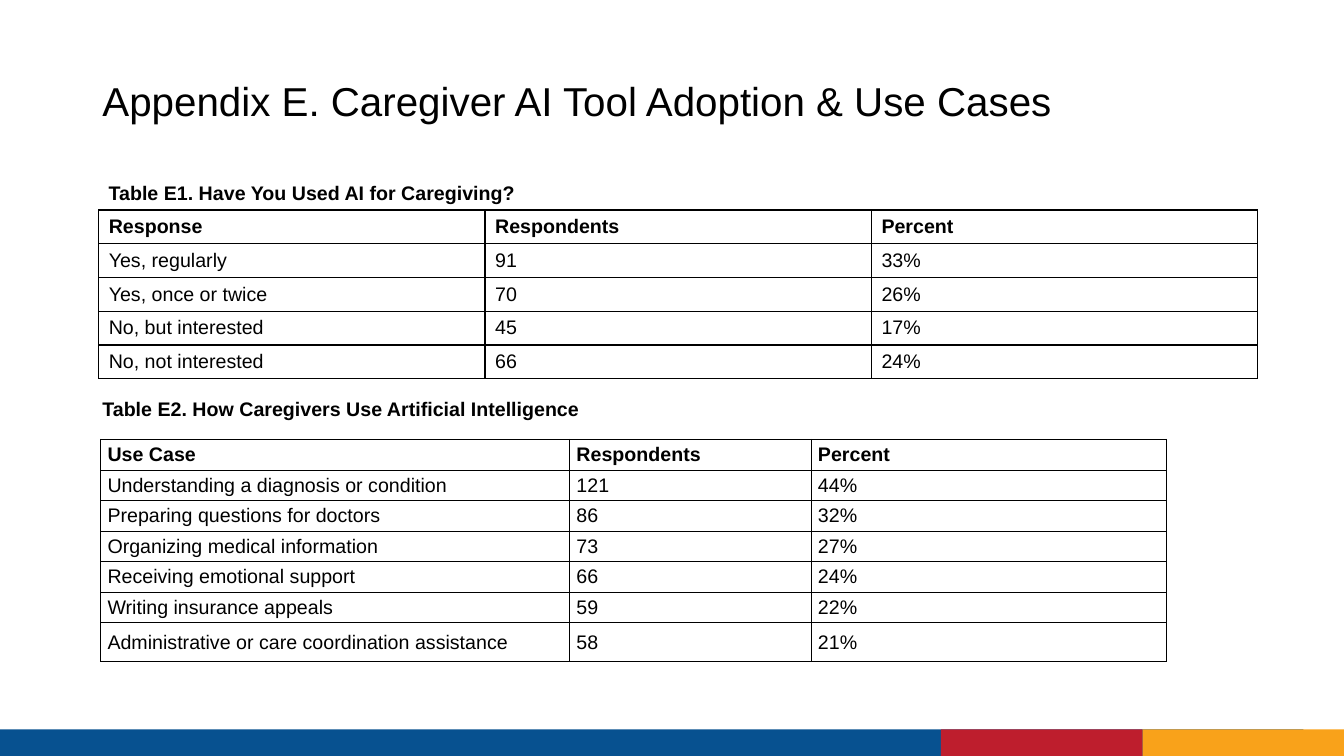
from dataclasses import dataclass

from lxml.etree import SubElement
from pptx import Presentation
from pptx.dml.color import RGBColor
from pptx.enum.shapes import MSO_SHAPE
from pptx.enum.text import MSO_ANCHOR, MSO_AUTO_SIZE, PP_ALIGN
from pptx.oxml.ns import qn
from pptx.util import Pt


@dataclass(frozen=True)
class Theme:
    font: str = "Arial"
    ink: str = "000000"
    blue: str = "075190"
    red: str = "BE1E2D"
    gold: str = "F9A21A"
    head: float = 28.8
    body: float = 14
    rule: float = 1


def put(frame, text, font, size, color, bold=False, space=1.0):
    """Set one formatted paragraph in a text frame."""
    para = frame.paragraphs[0]
    para.text = text
    para.alignment = PP_ALIGN.LEFT
    para.line_spacing = space
    para.font.name = font
    para.font.size = Pt(size)
    para.font.bold = bold
    para.font.color.rgb = RGBColor.from_string(color)


def edge(cell, color, width):
    """Draw a solid border on all four sides of a cell."""
    props = cell._tc.get_or_add_tcPr()
    for at, side in enumerate(("lnL", "lnR", "lnT", "lnB")):
        line = SubElement(props, qn(f"a:{side}"), w=str(Pt(width)))
        fill = SubElement(line, qn("a:solidFill"))
        SubElement(fill, qn("a:srgbClr"), val=color)
        props.insert(at, line)


class Page:
    def __init__(self, deck, theme):
        self.theme = theme
        self.slide = deck.slides.add_slide(deck.slide_layouts[5])
        self.shapes = self.slide.shapes

    def text(self, frame, words, **style):
        base = dict(font=self.theme.font, size=self.theme.body,
                    color=self.theme.ink)
        put(frame, words, **(base | style))

    def title(self, words, left, top, width, height):
        box = self.shapes.title
        box.left, box.top = Pt(left), Pt(top)
        box.width, box.height = Pt(width), Pt(height)
        frame = box.text_frame
        frame.word_wrap = True
        frame.auto_size = MSO_AUTO_SIZE.NONE
        frame.vertical_anchor = MSO_ANCHOR.BOTTOM
        self.text(frame, words, size=self.theme.head, space=0.9)

    def label(self, words, left, top, width, height):
        box = self.shapes.add_textbox(Pt(left), Pt(top), Pt(width), Pt(height))
        frame = box.text_frame
        frame.word_wrap = True
        frame.auto_size = MSO_AUTO_SIZE.SHAPE_TO_FIT_TEXT
        self.text(frame, words, bold=True)

    def bar(self, color, left, top, width, height):
        box = self.shapes.add_shape(MSO_SHAPE.RECTANGLE, Pt(left), Pt(top),
                                    Pt(width), Pt(height))
        box.shadow.inherit = False
        box.fill.solid()
        box.fill.fore_color.rgb = RGBColor.from_string(color)
        box.line.fill.background()

    def table(self, data, left, top, cols, rows, pad):
        """Draw a ruled table; pad is the side and top cell margin."""
        grid = self.shapes.add_table(len(rows), len(cols), Pt(left), Pt(top),
                                     Pt(sum(cols)), Pt(sum(rows))).table
        grid.first_row = grid.horz_banding = False
        for col, width in zip(grid.columns, cols):
            col.width = Pt(width)
        for at, (row, height, texts) in enumerate(zip(grid.rows, rows, data)):
            row.height = Pt(height)
            for cell, words in zip(row.cells, texts):
                cell.margin_left = cell.margin_right = Pt(pad[0])
                cell.margin_top = cell.margin_bottom = Pt(pad[1])
                cell.vertical_anchor = MSO_ANCHOR.MIDDLE
                cell.fill.background()
                edge(cell, self.theme.ink, self.theme.rule)
                self.text(cell.text_frame, words, bold=at == 0)


USED = [
    ("Response", "Respondents", "Percent"),
    ("Yes, regularly", "91", "33%"),
    ("Yes, once or twice", "70", "26%"),
    ("No, but interested", "45", "17%"),
    ("No, not interested", "66", "24%"),
]
CASES = [
    ("Use Case", "Respondents", "Percent"),
    ("Understanding a diagnosis or condition", "121", "44%"),
    ("Preparing questions for doctors", "86", "32%"),
    ("Organizing medical information", "73", "27%"),
    ("Receiving emotional support", "66", "24%"),
    ("Writing insurance appeals", "59", "22%"),
    ("Administrative or care coordination assistance", "58", "21%"),
]


def main():
    deck = Presentation()
    deck.slide_width, deck.slide_height = Pt(960), Pt(540)
    theme = Theme()
    page = Page(deck, theme)

    for color, left, width in ((theme.blue, 0, 931), (theme.gold, 816, 144),
                               (theme.red, 672, 144)):
        page.bar(color, left, 521, width, 19)

    page.title("Appendix E. Caregiver AI Tool Adoption & Use Cases",
               66, 49, 722, 44)
    page.label("Table E1. Have You Used AI for Caregiving?",
               70.5, 125.5, 480, 24)
    page.table(USED, 70.5, 150, [276] * 3, [24.1] * 5, (7.2, 3.6))
    page.label("Table E2. How Caregivers Use Artificial Intelligence",
               66, 280, 480, 24)
    page.table(CASES, 72, 314, [335, 172.5, 253.5],
               [21.8] * 6 + [28], (4.8, 2.4))
    deck.save("out.pptx")


if __name__ == "__main__":
    main()
